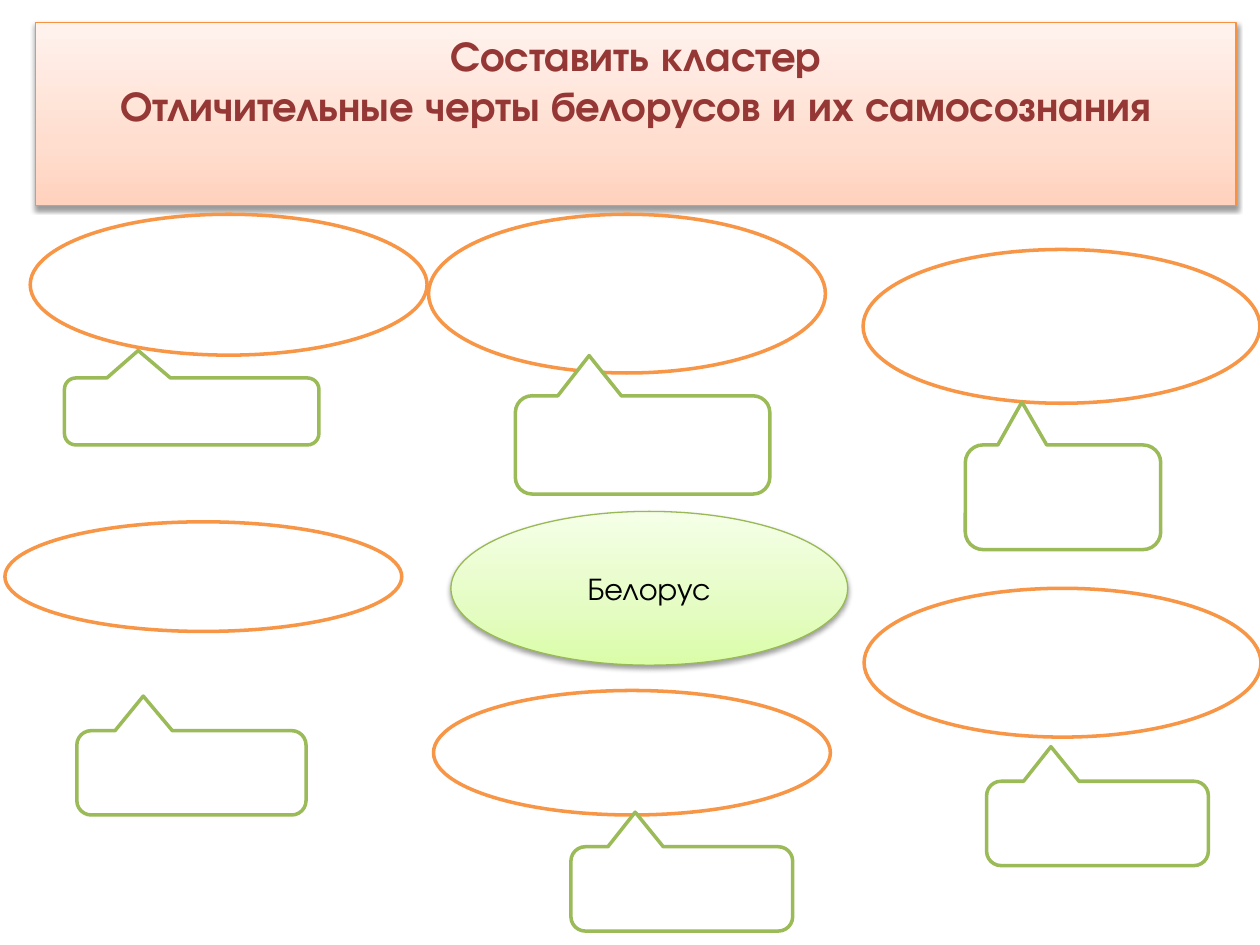
import copy
import pptx
import pptx.util
import pptx.dml.color
import pptx.enum.shapes
import pptx.enum.text
import pptx.oxml
import pptx.oxml.ns

Cm = pptx.util.Cm
Pt = pptx.util.Pt
Rgb = pptx.dml.color.RGBColor.from_string
Kind = pptx.enum.shapes.MSO_SHAPE
Anchor = pptx.enum.text.MSO_ANCHOR

theme = {
    "font": "TeX Gyre Adventor",
    "head": {"size": 24, "ink": "953735", "bold": True},
    "core": {"size": 18, "ink": "000000", "bold": False},
    "peach": ("FFD2BD", "FFDED0", "FFF2ED"),
    "lime": ("DAFDA7", "E4FCC2", "F5FFE7"),
    "rim": {"peach": "F69240", "lime": "98B955"},
    "paper": "FFFFFF",
    "oval": "F79646",
    "note": "9BBB59",
}


def glow(shape, name):
    fill = shape.fill
    fill.gradient()
    fill.gradient_angle = 90
    stops = shape.element.spPr.find(".//" + pptx.oxml.ns.qn("a:gsLst"))
    stops.append(copy.deepcopy(stops[0]))
    for stop, place, tint in zip(fill.gradient_stops, (0, 0.35, 1), theme[name]):
        stop.position = place
        stop.color.rgb = Rgb(tint)
    shape.line.color.rgb = Rgb(theme["rim"][name])
    shape.line.width = Pt(0.75)
    shape.shadow.inherit = False
    effect = shape.element.spPr.find(pptx.oxml.ns.qn("a:effectLst"))
    effect.append(pptx.oxml.parse_xml(
        f'<a:outerShdw {pptx.oxml.ns.nsdecls("a")} blurRad="{Pt(3.1)}" dist="{Pt(1.6)}" '
        'dir="5400000" rotWithShape="0"><a:srgbClr val="000000">'
        '<a:alpha val="38000"/></a:srgbClr></a:outerShdw>'))


def write(shape, lines, style, anchor):
    frame = shape.text_frame
    frame.word_wrap = True
    frame.auto_size = pptx.enum.text.MSO_AUTO_SIZE.NONE
    frame.vertical_anchor = anchor
    for num, line in enumerate(lines):
        para = frame.add_paragraph() if num else frame.paragraphs[0]
        para.alignment = pptx.enum.text.PP_ALIGN.CENTER
        para.space_before = Pt(0)
        run = para.add_run()
        run.text = line
        run.font.name = theme["font"]
        run.font.size = Pt(style["size"])
        run.font.bold = style["bold"]
        run.font.color.rgb = Rgb(style["ink"])


deck = pptx.Presentation()
deck.slide_width = Cm(25.4)
deck.slide_height = Cm(19.05)
slide = deck.slides.add_slide(deck.slide_layouts[5])
shapes = slide.shapes

title = shapes.title
title.left, title.top = Cm(0.71), Cm(0.46)
title.width, title.height = Cm(24.21), Cm(3.68)
glow(title, "peach")
write(title, ("Составить кластер", "Отличительные черты белорусов и их самосознания"),
      theme["head"], Anchor.TOP)

wide = 8
core = shapes.add_shape(Kind.OVAL, Cm(9.09), Cm(10.31), Cm(wide), Cm(3.1))
glow(core, "lime")
write(core, ("Белорус",), theme["core"], Anchor.MIDDLE)

ovals = (
    (8.64, 4.32, wide, 3.2),
    (17.42, 11.86, wide, 3),
    (17.4, 5.03, wide, 3.1),
    (0.1, 10.52, wide, 2.21),
    (0.61, 4.32, wide, 2.84),
    (8.74, 13.92, wide, 2.51),
)
notes = (
    (1.3, 7.62, 5.13, 1.35),
    (10.39, 7.98, 5.13, 1.98),
    (19.46, 8.97, 3.94, 2.11),
    (1.55, 14.73, 4.62, 1.7),
    (19.89, 15.75, 4.47, 1.7),
    (11.51, 17.07, 4.47, 1.7),
)
groups = (
    (Kind.OVAL, "oval", ovals, ()),
    (Kind.ROUNDED_RECTANGULAR_CALLOUT, "note", notes, (-0.21, -0.91, 0.17)),
)
for kind, name, boxes, tail in groups:
    for box in boxes:
        shape = shapes.add_shape(kind, *map(Cm, box))
        for num, value in enumerate(tail):
            shape.adjustments[num] = value
        shape.shadow.inherit = False
        shape.fill.solid()
        shape.fill.fore_color.rgb = Rgb(theme["paper"])
        shape.line.color.rgb = Rgb(theme[name])
        shape.line.width = Pt(2)

deck.save("out.pptx")
